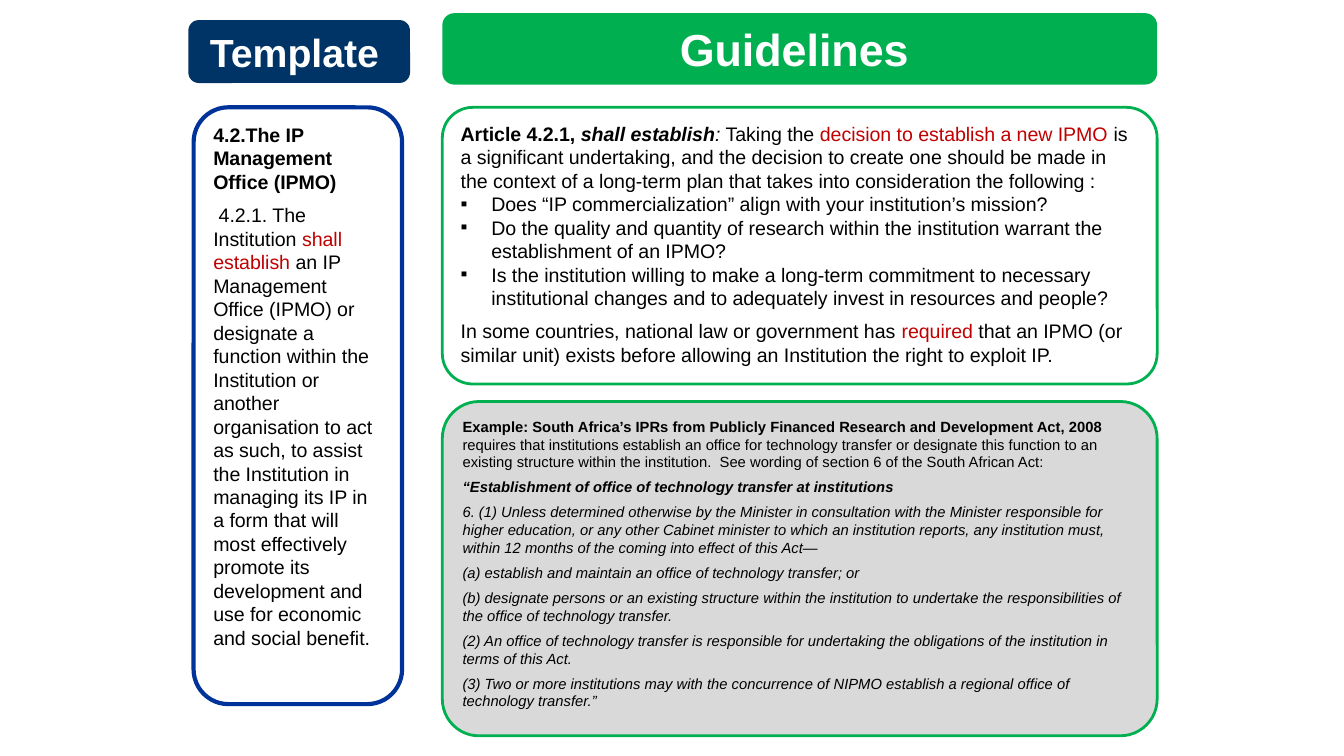
from pptx import Presentation
from pptx.dml.color import RGBColor
from pptx.enum.shapes import MSO_SHAPE as SHAPE
from pptx.enum.text import MSO_ANCHOR as ANCHOR, PP_ALIGN as ALIGN
from pptx.oxml.ns import qn
from pptx.util import Cm, Pt
from lxml.etree import SubElement

FONT = "Arial"
BLACK = RGBColor(0x00, 0x00, 0x00)
WHITE = RGBColor(0xFF, 0xFF, 0xFF)
RED = RGBColor(0xC0, 0x00, 0x00)
GREEN = RGBColor(0x00, 0xB0, 0x50)
NAVY = RGBColor(0x00, 0x33, 0x66)
BLUE = RGBColor(0x00, 0x33, 0x99)
GREY = RGBColor(0xD9, 0xD9, 0xD9)
BODY_SIZE = 10.5
EXAMPLE_SIZE = 7.9


def add_box(slide, box, fill, line=None, width=1.5, adj=None, anchor=ANCHOR.TOP):
    s = slide.shapes.add_shape(SHAPE.ROUNDED_RECTANGLE, *map(Cm, box))
    s.shadow.inherit = False
    if adj is not None:
        s.adjustments[0] = adj
    s.fill.solid()
    s.fill.fore_color.rgb = fill
    if line is None:
        s.line.fill.background()
    else:
        s.line.color.rgb = line
        s.line.width = Pt(width)
    tf = s.text_frame
    tf.word_wrap = True
    tf.vertical_anchor = anchor
    tf.margin_left = tf.margin_right = Cm(0.18)
    tf.margin_top = tf.margin_bottom = Cm(0.1)
    return tf


def add_paragraph(tf, before=0, align=ALIGN.LEFT, bullet=None):
    first = not tf.paragraphs[0].runs
    p = tf.paragraphs[0] if first else tf.add_paragraph()
    p.alignment = align
    p.space_before = Pt(0 if first else before)
    if bullet:
        pPr = p._p.get_or_add_pPr()
        pPr.set("marL", str(Cm(0.58)))
        pPr.set("indent", str(-Cm(0.58)))
        SubElement(pPr, qn("a:buFont")).set("typeface", FONT)
        SubElement(pPr, qn("a:buChar")).set("char", bullet)
    return p


def add_text(p, text, size=BODY_SIZE, color=BLACK, bold=False, italic=False):
    r = p.add_run()
    r.text = text
    r.font.name = FONT
    r.font.size = Pt(size)
    r.font.color.rgb = color
    r.font.bold = bold
    r.font.italic = italic


def add_header(slide, box, title, fill, size):
    tf = add_box(slide, box, fill, anchor=ANCHOR.MIDDLE)
    p = add_paragraph(tf, align=ALIGN.CENTER)
    add_text(p, title, size=size, color=WHITE, bold=True)
    add_text(p, " ", size=size - 3, color=WHITE, bold=True)


def add_template(slide, box):
    tf = add_box(slide, box, WHITE, line=BLUE, width=2.25)
    p = add_paragraph(tf)
    add_text(p, "4.2.The IP Management Office (IPMO)", bold=True)
    p = add_paragraph(tf, before=BODY_SIZE / 2)
    add_text(p, " 4.2.1. The Institution ")
    add_text(p, "shall establish", color=RED)
    add_text(p, " an IP Management Office (IPMO) or designate a function within "
                "the Institution or another organisation to act as such, to assist "
                "the Institution in managing its IP in a form that will most "
                "effectively promote its development and use for economic and "
                "social benefit.")


def add_guidelines(slide, box):
    tf = add_box(slide, box, WHITE, line=GREEN, adj=0.11)
    p = add_paragraph(tf)
    add_text(p, "Article 4.2.1, ", bold=True)
    add_text(p, "shall establish", bold=True, italic=True)
    add_text(p, ":", italic=True)
    add_text(p, " Taking the ")
    add_text(p, "decision to establish a new IPMO ", color=RED)
    add_text(p, "is a significant undertaking, and the decision to create one "
                "should be made in the context of a long-term plan that takes "
                "into consideration the following :")
    questions = [
        "Does “IP commercialization” align with your institution’s mission?",
        "Do the quality and quantity of research within the institution warrant "
        "the establishment of an IPMO?",
        "Is the institution willing to make a long-term commitment to necessary "
        "institutional changes and to adequately invest in resources and people?",
    ]
    for question in questions:
        add_text(add_paragraph(tf, bullet="▪"), question)
    p = add_paragraph(tf, before=BODY_SIZE / 2)
    add_text(p, "In some countries, national law or government has ")
    add_text(p, "required", color=RED)
    add_text(p, " that an IPMO (or similar unit) exists before allowing an "
                "Institution the right to exploit IP.")


def add_example(slide, box):
    tf = add_box(slide, box, GREY, line=GREEN, adj=0.11)
    p = add_paragraph(tf)
    add_text(p, "Example: South Africa’s IPRs from Publicly Financed Research and "
                "Development Act, 2008 ", size=EXAMPLE_SIZE, bold=True)
    add_text(p, "requires that institutions establish an office for technology "
                "transfer or designate this function to an existing structure "
                "within the institution.  See wording of section 6 of the South "
                "African Act:", size=EXAMPLE_SIZE)
    clauses = [
        "“Establishment of office of technology transfer at institutions",
        "6. (1) Unless determined otherwise by the Minister in consultation with "
        "the Minister responsible for higher education, or any other Cabinet "
        "minister to which an institution reports, any institution must, within "
        "12 months of the coming into effect of this Act—",
        "(a) establish and maintain an office of technology transfer; or",
        "(b) designate persons or an existing structure within the institution to "
        "undertake the responsibilities of the office of technology transfer.",
        "(2) An office of technology transfer is responsible for undertaking the "
        "obligations of the institution in terms of this Act.",
        "(3) Two or more institutions may with the concurrence of NIPMO establish "
        "a regional office of technology transfer.”",
    ]
    for i, clause in enumerate(clauses):
        p = add_paragraph(tf, before=EXAMPLE_SIZE / 2)
        add_text(p, clause, size=EXAMPLE_SIZE, bold=i == 0, italic=True)


def main():
    prs = Presentation()
    prs.slide_width, prs.slide_height = Cm(25.4), Cm(14.29)
    slide = prs.slides.add_slide(prs.slide_layouts[6])
    left, width, top = 8.36, 13.51, 2.03
    add_guidelines(slide, (left, top, width, 5.23))
    add_header(slide, (left, 0.25, width, 1.35), "Guidelines", GREEN, 24)
    add_template(slide, (3.66, top, 3.94, 11.28))
    add_header(slide, (3.56, 0.38, 4.19, 1.19), "Template", NAVY, 21)
    add_example(slide, (left, 7.59, width, 6.32))
    prs.save("out.pptx")


if __name__ == "__main__":
    main()
